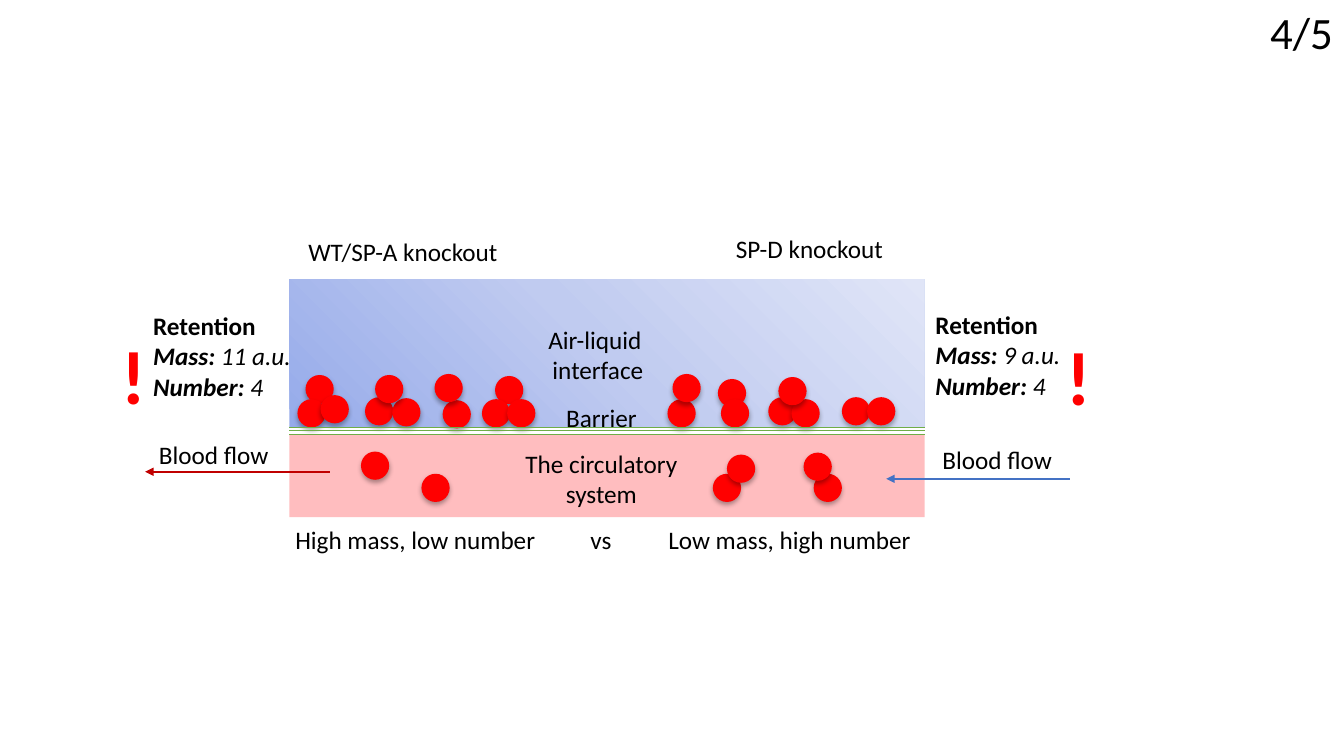
from copy import deepcopy
from dataclasses import dataclass

from pptx import Presentation
from pptx.dml.color import RGBColor
from pptx.enum.shapes import MSO_CONNECTOR as Connector, MSO_SHAPE as Shape
from pptx.enum.text import MSO_AUTO_SIZE as AutoSize, PP_ALIGN as Align
from pptx.oxml import parse_xml
from pptx.oxml.ns import nsdecls, qn
from pptx.util import Pt

PX = 9144  # EMU per px, 100 px to the inch
FONT = "Calibri"
COLORS = {
    "text": "000000", "particle": "FF0000", "blood": "FFBDBF", "barrier": "70AD47",
    "outflow": "C00000", "inflow": "4472C4",
    "air_dark": "96ABEA", "air_mid": "C0CBF0", "air_light": "E0E5F7",
}
PARTICLE = 28


@dataclass
class Side:
    """One half of the comparison; places are px from the panel corner."""
    title: tuple
    retention: tuple
    mass: str
    alert: tuple
    flow: tuple
    arrow: tuple
    arrow_color: str
    caption: tuple
    particles: list


LEFT = Side(
    title=("WT/SP-A knockout", 9, -47, 210, 40),
    retention=(-145, 26, 158, 101), mass="11", alert=(-176, 44, 80, 101),
    flow=(-140, 154, 130, 40), arrow=(40, -143, 191), arrow_color="outflow",
    caption=("High mass, low number", -4, 238, 265, 40),
    particles=[(16, 95), (204, 96), (191, 119), (8, 119), (31, 115), (75, 117),
               (216, 119), (102, 118), (152, 120), (144, 94), (85, 95),
               (71, 171), (131, 193)],
)
RIGHT = Side(
    title=("SP-D knockout", 433, -50, 168, 40),
    retention=(631, 25, 146, 101), mass="9", alert=(761, 45, 80, 101),
    flow=(637, 159, 130, 40), arrow=(774, 592, 198), arrow_color="inflow",
    caption=("Low mass, high number", 366, 238, 264, 40),
    particles=[(375, 119), (475, 117), (548, 117), (380, 94), (425, 99),
               (573, 117), (498, 119), (428, 119), (485, 97),
               (520, 193), (510, 172), (420, 193), (434, 174)],
)
CENTER_LABELS = [
    ("Air-liquid \vinterface", 246, 40, 120, 71),
    ("The circulatory\vsystem", 223, 163, 173, 71),
    ("Barrier", 264, 117, 91, 40),
    ("vs", 288, 238, 42, 40),
]


def color(name):
    return RGBColor.from_string(COLORS[name])


def add_block(page, kind, left, top, width, height, fill=None):
    shape = page.shapes.add_shape(kind, left * PX, top * PX, width * PX, height * PX)
    shape.shadow.inherit = False
    shape.line.fill.background()
    if fill:
        shape.fill.solid()
        shape.fill.fore_color.rgb = color(fill)
    return shape


def add_line(page, x1, y1, x2, y2, line_color, width, arrow=False):
    line = page.shapes.add_connector(
        Connector.STRAIGHT, x1 * PX, y1 * PX, x2 * PX, y2 * PX)
    line.line.color.rgb = color(line_color)
    line.line.width = Pt(width)
    if arrow:
        line.line._get_or_add_ln().append(
            parse_xml(f'<a:tailEnd {nsdecls("a")} type="triangle"/>'))
    line._element.spPr.append(parse_xml(f'<a:effectLst {nsdecls("a")}/>'))


def style(para, size=18, bold=None, text_color="text", align=Align.LEFT):
    para.alignment = align
    para.font.name, para.font.size, para.font.bold = FONT, Pt(size), bold
    para.font.color.rgb = color(text_color)


def add_text(page, text, left, top, width, height, wrap=False, **look):
    box = page.shapes.add_textbox(left * PX, top * PX, width * PX, height * PX)
    frame = box.text_frame
    frame.word_wrap = wrap
    frame.auto_size = AutoSize.SHAPE_TO_FIT_TEXT
    frame.text = text
    style(frame.paragraphs[0], **look)
    return frame


def add_particle(page, left, top):
    dot = add_block(page, Shape.OVAL, left, top, PARTICLE, PARTICLE, "particle")
    dot._element.spPr.find(qn("a:effectLst")).append(parse_xml(
        f'<a:outerShdw {nsdecls("a")} blurRad="44450" dist="27940" dir="5400000" '
        'rotWithShape="0"><a:srgbClr val="000000"><a:alpha val="32000"/>'
        '</a:srgbClr></a:outerShdw>'))


def add_retention(page, mass, left, top, width, height):
    frame = add_text(page, "Retention", left, top, width, height, bold=True)
    para = frame.add_paragraph()
    style(para)
    para.font.italic = True
    for index, (name, value) in enumerate([("Mass:", f" {mass} a.u."), ("Number: ", "4")]):
        if index:
            para.add_line_break()
        for text, bold in ((name, True), (value, False)):
            span = para.add_run()
            span.text, span.font.bold = text, bold


def draw_layers(page, left, top, width):
    # Blood below, air-liquid interface above
    add_block(page, Shape.RECTANGLE, left, top + 154, width, 82, "blood")
    air = add_block(page, Shape.RECTANGLE, left, top, width, 147)
    air.fill.gradient()
    air.fill.gradient_angle = 45
    stops = air._element.spPr.find(qn("a:gradFill")).find(qn("a:gsLst"))
    stops.insert(1, deepcopy(stops[0]))
    shades = zip(air.fill.gradient_stops, ("air_dark", "air_mid", "air_light"), (0, 0.5, 1))
    for stop, name, position in shades:
        stop.color.rgb, stop.position = color(name), position


def draw_barrier(page, left, top, width):
    for offset in (147, 150, 154):
        add_line(page, left, top + offset, left + width, top + offset, "barrier", 1)
    for text, x, y, w, h in CENTER_LABELS:
        add_text(page, text, left + x, top + y, w, h, align=Align.CENTER)


def draw_side(page, side, left, top):
    def at(x, y, *size):
        return left + x, top + y, *size

    for spot in side.particles:
        add_particle(page, *at(*spot))
    # Heading and caption
    for text, *place in (side.title, side.caption):
        add_text(page, text, *at(*place))
    # Retention figures with alert mark
    add_retention(page, side.mass, *at(*side.retention))
    add_text(page, "!", *at(*side.alert), wrap=True,
             size=54, bold=True, text_color="particle")
    # Blood flow
    start, end, y = side.arrow
    add_line(page, *at(start, y), *at(end, y), side.arrow_color, 1.5, arrow=True)
    add_text(page, "Blood flow", *at(*side.flow), align=Align.CENTER)


def main():
    deck = Presentation()
    deck.slide_width, deck.slide_height = 1333 * PX, 750 * PX
    page = deck.slides.add_slide(deck.slide_layouts[6])
    left, top, width = 287, 277, 630
    draw_layers(page, left, top, width)
    for side in (LEFT, RIGHT):
        draw_side(page, side, left, top)
    draw_barrier(page, left, top, width)
    # Page count
    add_text(page, "4/5", 1250, 0, 83, 64, size=32)
    deck.save("out.pptx")


if __name__ == "__main__":
    main()
